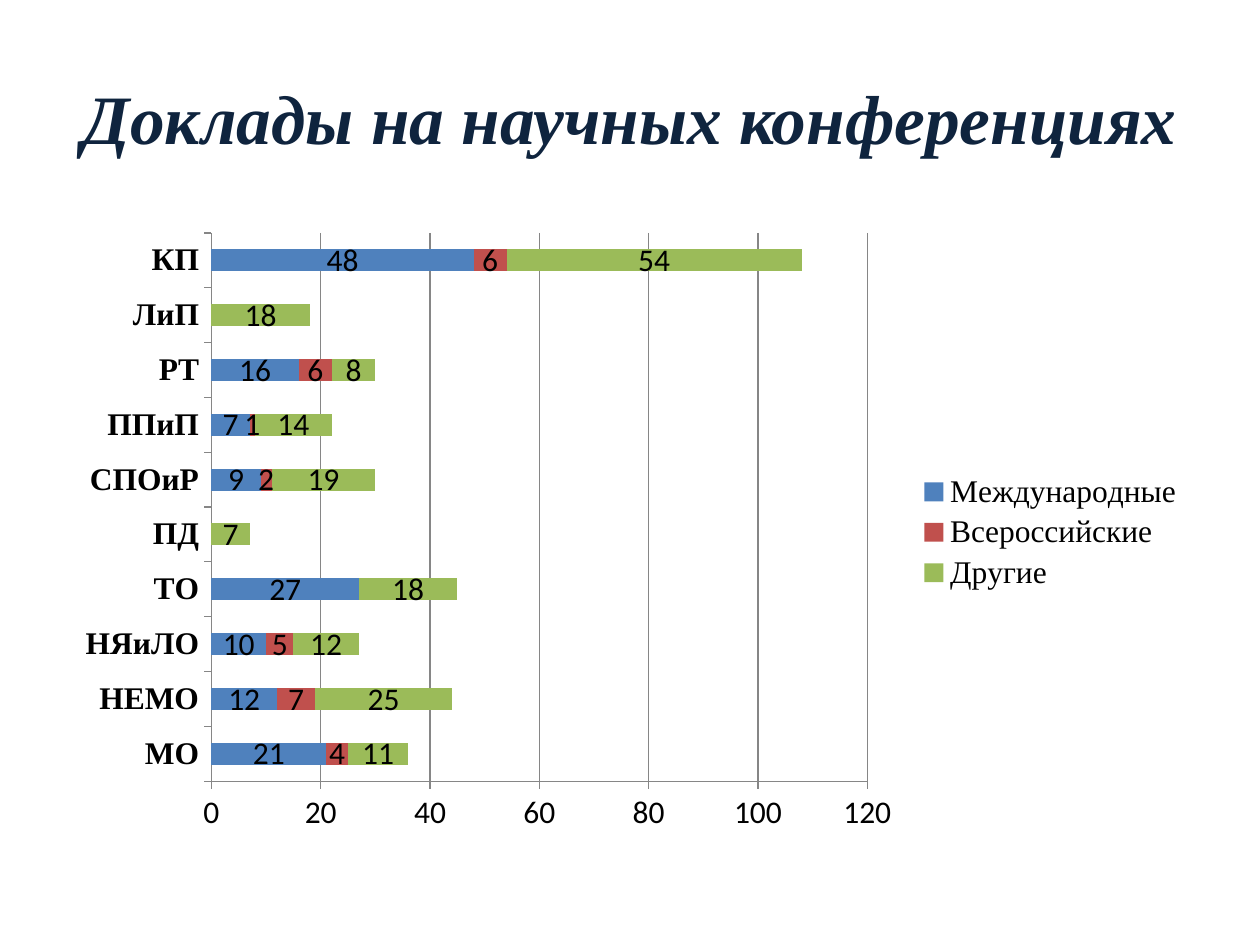
import pptx
import pptx.chart.data
import pptx.dml.color
import pptx.enum.chart
import pptx.enum.text
import pptx.util

RGBColor = pptx.dml.color.RGBColor
NAVY = RGBColor(0x0F, 0x24, 0x3E)
BLACK = RGBColor(0x00, 0x00, 0x00)
GRAY = RGBColor(0x86, 0x86, 0x86)
BLUE = RGBColor(0x4F, 0x81, 0xBD)
RED = RGBColor(0xC0, 0x50, 0x4D)
GREEN = RGBColor(0x9B, 0xBB, 0x59)

SERIF = "Times New Roman"
SANS = "Calibri"
TITLE_ONLY = 5

DEPARTMENTS = ["МО", "НЕМО", "НЯиЛО", "ТО", "ПД",
               "СПОиР", "ППиП", "РТ", "ЛиП", "КП"]
REPORTS = [
    ("Международные", BLUE, [21, 12, 10, 27, None, 9, 7, 16, None, 48]),
    ("Всероссийские", RED, [4, 7, 5, None, None, 2, 1, 6, None, 6]),
    ("Другие", GREEN, [11, 25, 12, 18, 7, 19, 14, 8, 18, 54]),
]


def apply(target, values):
    for name, value in values.items():
        setattr(target, name, value)


class SlideBuilder:
    """Holds the style and the current slide; boxes are shares of the slide."""

    def __init__(self, presentation):
        self.width = presentation.slide_width
        self.height = presentation.slide_height
        self.slide = presentation.slides.add_slide(
            presentation.slide_layouts[TITLE_ONLY])
        self.title_font = {"name": SERIF, "size": pptx.util.Pt(39.6),
                           "bold": True, "italic": True}
        self.chart_font = {"name": SANS, "size": pptx.util.Pt(18)}

    def box(self, left, top, width, height):
        return {"left": round(left * self.width), "top": round(top * self.height),
                "width": round(width * self.width),
                "height": round(height * self.height)}

    def font(self, font, color, values):
        apply(font, values)
        font.color.rgb = color

    def title(self, text, *shares):
        shape = self.slide.shapes.title
        apply(shape, self.box(*shares))
        frame = shape.text_frame
        apply(frame, {"text": text, "word_wrap": True,
                      "vertical_anchor": pptx.enum.text.MSO_ANCHOR.MIDDLE})
        paragraph = frame.paragraphs[0]
        paragraph.alignment = pptx.enum.text.PP_ALIGN.CENTER
        self.font(paragraph.runs[0].font, NAVY, self.title_font)

    def stacked_bars(self, categories, series_rows, *shares):
        data = pptx.chart.data.CategoryChartData()
        data.categories = categories
        for name, _, values in series_rows:
            data.add_series(name, values)
        chart = self.slide.shapes.add_chart(
            pptx.enum.chart.XL_CHART_TYPE.BAR_STACKED,
            *self.box(*shares).values(), data).chart
        apply(chart, {"has_title": False, "has_legend": True})
        self.font(chart.font, BLACK, self.chart_font)

        # Bars and their values
        plot = chart.plots[0]
        apply(plot, {"gap_width": 150, "overlap": 100, "vary_by_categories": False})
        for series, (_, color, _) in zip(plot.series, series_rows):
            series.format.fill.solid()
            series.format.fill.fore_color.rgb = color
            labels = series.data_labels
            labels.show_value = True
            self.font(labels.font, BLACK, self.chart_font)

        # Axes and gridlines
        outside = pptx.enum.chart.XL_TICK_MARK.OUTSIDE
        none = pptx.enum.chart.XL_TICK_MARK.NONE
        serif = {**self.chart_font, "name": SERIF}
        for axis, font, grid in (
                (chart.category_axis, {**serif, "bold": True}, False),
                (chart.value_axis, self.chart_font, True)):
            apply(axis, {"major_tick_mark": outside, "minor_tick_mark": none,
                         "has_major_gridlines": grid})
            self.font(axis.tick_labels.font, BLACK, font)
            lines = [axis.format.line]
            if grid:
                lines.append(axis.major_gridlines.format.line)
            for line in lines:
                line.color.rgb = GRAY
                line.width = pptx.util.Pt(0.75)

        # Legend
        apply(chart.legend, {
            "position": pptx.enum.chart.XL_LEGEND_POSITION.RIGHT,
            "include_in_layout": False})
        self.font(chart.legend.font, BLACK, serif)


def main():
    presentation = pptx.Presentation()
    apply(presentation, {"slide_width": pptx.util.Inches(10),
                         "slide_height": pptx.util.Inches(7.5)})
    builder = SlideBuilder(presentation)
    builder.title("Доклады на научных конференциях", 0.05, 0.04, 0.9, 1 / 6)
    builder.stacked_bars(DEPARTMENTS, REPORTS, 0.05, 7 / 30, 0.9, 0.66)
    presentation.save("out.pptx")


if __name__ == "__main__":
    main()
